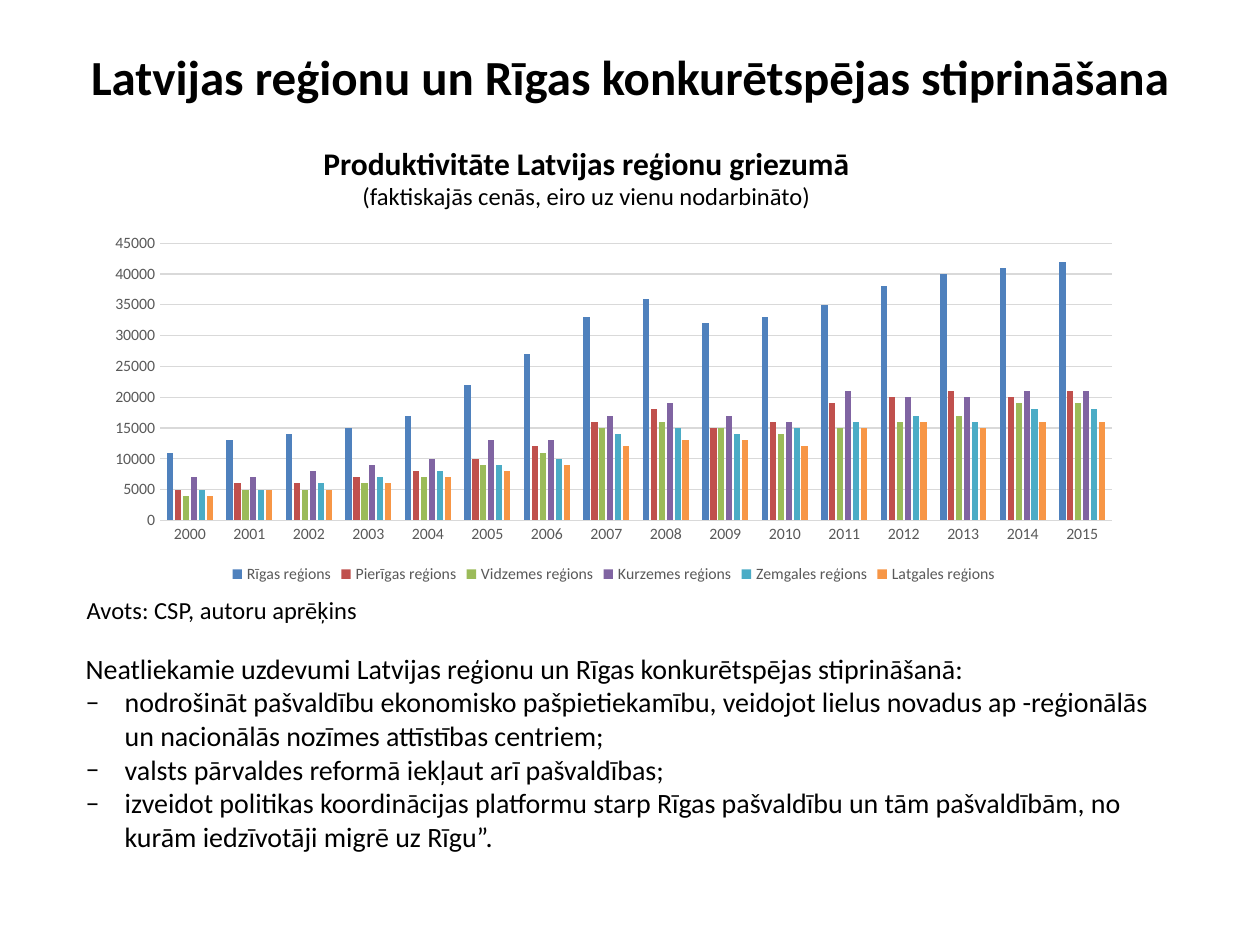
from pptx import Presentation
from pptx.chart.data import CategoryChartData as ChartData
from pptx.dml.color import RGBColor as RGB
from pptx.enum.chart import XL_CHART_TYPE as Kind, XL_LEGEND_POSITION as Side
from pptx.enum.chart import XL_TICK_MARK as Tick
from pptx.enum.text import MSO_ANCHOR as Anchor, MSO_AUTO_SIZE as Fit, PP_ALIGN as Align
from pptx.oxml.ns import qn
from pptx.util import Inches, Pt
from lxml.etree import SubElement

FONT = "Calibri"
COLORS = {"text": "000000", "label": "595959", "grid": "D9D9D9"}
YEARS = range(2000, 2016)
# Region: bar colour, productivity in thousands of euros
REGIONS = {
    "Rīgas reģions": ("4F81BD", [11, 13, 14, 15, 17, 22, 27, 33, 36, 32, 33, 35, 38, 40, 41, 42]),
    "Pierīgas reģions": ("C0504D", [5, 6, 6, 7, 8, 10, 12, 16, 18, 15, 16, 19, 20, 21, 20, 21]),
    "Vidzemes reģions": ("9BBB59", [4, 5, 5, 6, 7, 9, 11, 15, 16, 15, 14, 15, 16, 17, 19, 19]),
    "Kurzemes reģions": ("8064A2", [7, 7, 8, 9, 10, 13, 13, 17, 19, 17, 16, 21, 20, 20, 21, 21]),
    "Zemgales reģions": ("4BACC6", [5, 5, 6, 7, 8, 9, 10, 14, 15, 14, 15, 16, 17, 16, 18, 18]),
    "Latgales reģions": ("F79646", [4, 5, 5, 6, 7, 8, 9, 12, 13, 13, 12, 15, 16, 15, 16, 16]),
}
TASKS = [
    "nodrošināt pašvaldību ekonomisko pašpietiekamību, veidojot lielus novadus ap "
    "-reģionālās un nacionālās nozīmes attīstības centriem;",
    "valsts pārvaldes reformā iekļaut arī pašvaldības;",
    "izveidot politikas koordinācijas platformu starp Rīgas pašvaldību un tām pašvaldībām, "
    "no kurām iedzīvotāji migrē uz Rīgu”.",
]


def set_font(font, size, color="text", bold=False):
    font.name, font.size, font.bold = FONT, Pt(size), bold
    font.color.rgb = RGB.from_string(COLORS[color])


def place(shape, left, top, width, height):
    shape.left, shape.top = Inches(left), Inches(top)
    shape.width, shape.height = Inches(width), Inches(height)


def add_text(frame, text, size, bold=False, align=Align.LEFT, bullet=None):
    """Write one paragraph, using the empty first one if there is one."""
    first = frame.paragraphs[0]
    para = frame.add_paragraph() if first.runs else first
    para.alignment, para.space_before = align, Pt(0)
    run = para.add_run()
    run.text = text
    set_font(run.font, size, bold=bold)
    props = para._p.get_or_add_pPr()
    hang = Inches(0.31) if bullet else 0
    props.set("marL", str(hang))
    props.set("indent", str(-hang))
    if bullet:
        SubElement(props, qn("a:buFont"), typeface=FONT)
        SubElement(props, qn("a:buChar"), char=bullet)
    else:
        SubElement(props, qn("a:buNone"))


def add_box(slide, *spot, wrap=True):
    frame = slide.shapes.add_textbox(*map(Inches, spot)).text_frame
    frame.word_wrap = wrap
    return frame


def style_axis(axis):
    axis.major_tick_mark = axis.minor_tick_mark = Tick.NONE
    set_font(axis.tick_labels.font, 9, "label")


def style_line(line):
    line.color.rgb = RGB.from_string(COLORS["grid"])
    line.width = Pt(0.75)


def add_bars(slide, *spot):
    data = ChartData(number_format="0")
    data.categories = [str(year) for year in YEARS]
    for name, (_, values) in REGIONS.items():
        data.add_series(name, [value * 1000 for value in values])
    chart = slide.shapes.add_chart(
        Kind.COLUMN_CLUSTERED, *map(Inches, spot), data).chart
    set_font(chart.font, 10)
    chart.has_title = False

    plot = chart.plots[0]
    plot.vary_by_categories = False
    plot.gap_width, plot.overlap = 219, -27
    for series, (color, _) in zip(plot.series, REGIONS.values()):
        series.format.fill.solid()
        series.format.fill.fore_color.rgb = RGB.from_string(color)

    years, euros = chart.category_axis, chart.value_axis
    style_axis(years)
    style_line(years.format.line)
    style_axis(euros)
    euros.format.line.fill.background()
    euros.has_major_gridlines = True
    style_line(euros.major_gridlines.format.line)
    euros.minimum_scale, euros.maximum_scale, euros.major_unit = 0, 45000, 5000

    chart.has_legend = True
    chart.legend.position = Side.BOTTOM
    chart.legend.include_in_layout = False
    set_font(chart.legend.font, 9, "label")


def main():
    deck = Presentation()
    deck.slide_width, deck.slide_height = Inches(10), Inches(7.5)
    slide = deck.slides.add_slide(deck.slide_layouts[1])

    title, body = slide.placeholders
    place(title, 0.5, 0.3, 9, 0.6)
    title.text_frame.vertical_anchor = Anchor.MIDDLE
    title.text_frame.auto_size = Fit.NONE
    add_text(title.text_frame, "Latvijas reģionu un Rīgas konkurētspējas stiprināšana",
             28, bold=True, align=Align.CENTER)

    head = add_box(slide, 0.59, 1.09, 8.13, 0.64)
    add_text(head, "Produktivitāte Latvijas reģionu griezumā", 18,
             bold=True, align=Align.CENTER)
    add_text(head, "(faktiskajās cenās, eiro uz vienu nodarbināto)", 14,
             align=Align.CENTER)

    place(body, 0.58, 5.12, 8.85, 1.72)
    body.text_frame.auto_size = Fit.NONE
    add_text(body.text_frame, "Neatliekamie uzdevumi Latvijas reģionu un Rīgas "
             "konkurētspējas stiprināšanā:", 16)
    for task in TASKS:
        add_text(body.text_frame, task, 16, bullet="–")

    add_bars(slide, 0.75, 1.8, 8.24, 2.87)
    source = add_box(slide, 0.59, 4.67, 2.37, 0.34, wrap=False)
    add_text(source, "Avots: CSP, autoru aprēķins", 14)

    deck.save("out.pptx")


if __name__ == "__main__":
    main()
